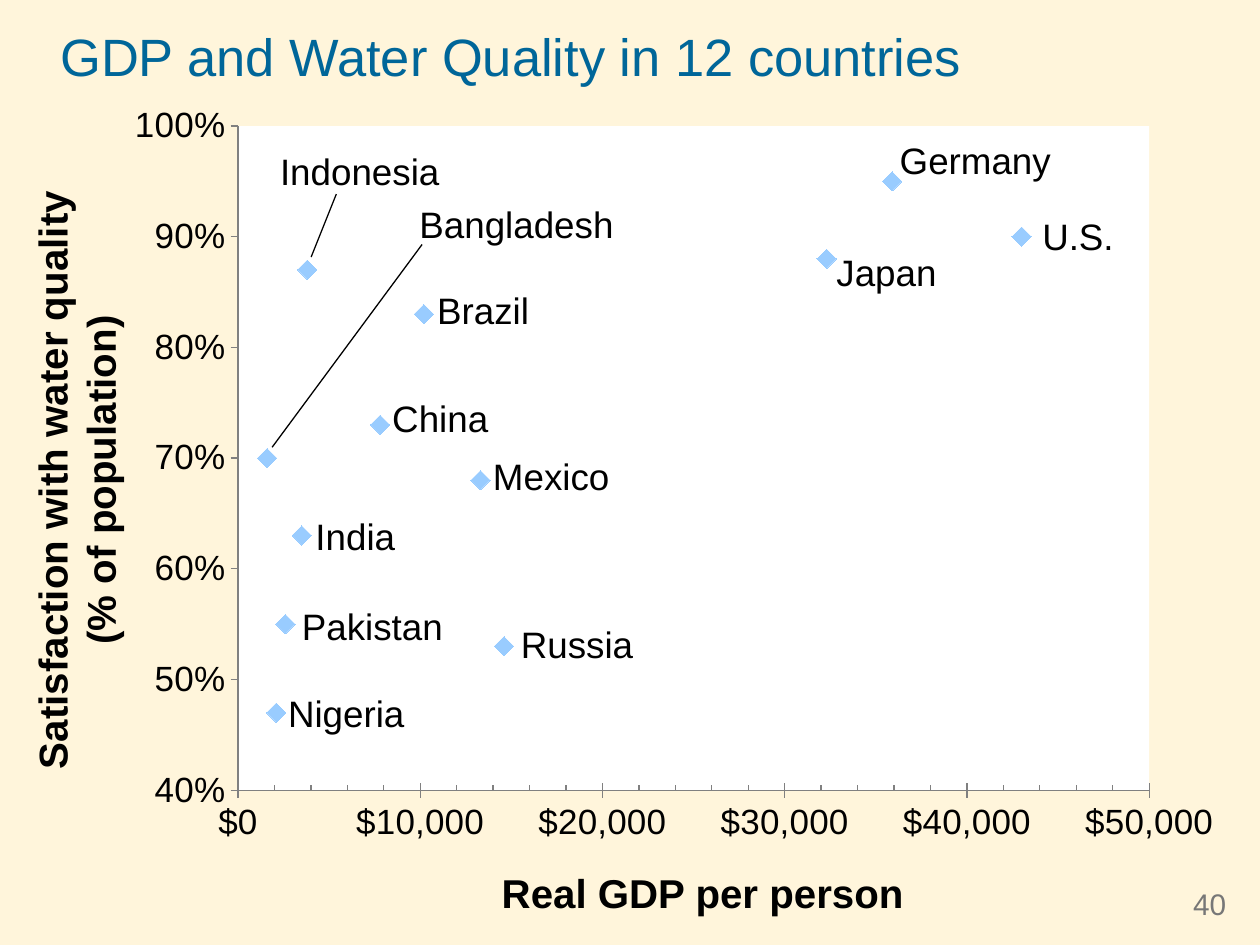
from lxml.etree import SubElement
from pptx import Presentation
from pptx.chart.data import XyChartData
from pptx.dml.color import RGBColor
from pptx.enum.chart import XL_AXIS_CROSSES, XL_CHART_TYPE, XL_MARKER_STYLE, XL_TICK_MARK
from pptx.enum.shapes import MSO_CONNECTOR
from pptx.enum.text import MSO_ANCHOR, PP_ALIGN
from pptx.oxml import parse_xml
from pptx.oxml.ns import nsdecls, qn
from pptx.util import Pt

COLORS = {"background": "FFF5DB", "title": "006699", "text": "000000", "number": "777777",
          "plot": "FFFFFF", "marker": "99CCFF", "axis": "808080"}
FONT = "Arial"

# Country, real GDP per person, satisfaction, label box (left, top, width)
COUNTRIES = [
    ("U.S.", 43000, 0.90, (589, 122.4, 54)),
    ("Germany", 35900, 0.95, (507.6, 78.5, 99.4)),
    ("Japan", 32300, 0.88, (470.2, 142.6, 72.7)),
    ("Russia", 14600, 0.53, (288.7, 355, 82)),
    ("Mexico", 13300, 0.68, (272.9, 259.2, 84.2)),
    ("Brazil", 10200, 0.83, (242.6, 164.2, 67)),
    ("China", 7800, 0.73, (219.6, 226, 64)),
    ("Indonesia", 3800, 0.87, (151.2, 85, 108.7)),
    ("India", 3500, 0.63, (173.5, 293.8, 59)),
    ("Pakistan", 2600, 0.55, (164.9, 344.9, 95.8)),
    ("Nigeria", 2100, 0.47, (163.4, 394.6, 69)),
    ("Bangladesh", 1600, 0.70, (235.4, 115.2, 119.5)),
]
LABEL_HEIGHT = 25.2
# Lines from a label to its point: x1, y1, x2, y2
LEADERS = [(241.2, 139.7, 155.5, 255.6), (177.8, 146.9, 192.2, 110.9)]

# Text, box (left, top, width, height), rotation, margins, paragraph and font formats
HEADINGS = [
    ("GDP and Water Quality in 12 countries", (27.4, 10, 662.4, 44), 0, "title",
     PP_ALIGN.LEFT, {"size": Pt(30)}),
    ("40", (653.8, 501.8, 54, 28.8), 0, "number", PP_ALIGN.RIGHT, {"size": Pt(17)}),
    ("Satisfaction with water quality\v(% of population)", (-149, 242.6, 384.5, 63.4), 270,
     "text", PP_ALIGN.CENTER, {"size": Pt(23), "bold": True}),
    ("Real GDP per person", (154.8, 492.5, 493.9, 34.6), 0, "text",
     PP_ALIGN.CENTER, {"size": Pt(23), "bold": True}),
]
CHART_BOX = (64.8, 59.8, 635.8, 434.9)
PLOT_LAYOUT = {"layoutTarget": "inner", "xMode": "edge", "yMode": "edge",
               "x": 0.112, "y": 0.028, "w": 0.819, "h": 0.873}
AXES = {
    "category_axis": {"minimum_scale": 0, "maximum_scale": 50000, "major_unit": 10000,
                      "minor_unit": 2000, "major_tick_mark": XL_TICK_MARK.CROSS,
                      "minor_tick_mark": XL_TICK_MARK.INSIDE},
    "value_axis": {"minimum_scale": 0.4, "maximum_scale": 1, "major_unit": 0.1,
                   "major_tick_mark": XL_TICK_MARK.OUTSIDE,
                   "minor_tick_mark": XL_TICK_MARK.NONE},
}
NUMBER_FORMATS = {"category_axis": '"$"#,##0', "value_axis": "0%"}


def color(name):
    return RGBColor.from_string(COLORS[name])


def set_all(target, values):
    for name, value in values.items():
        setattr(target, name, value)


def add_text(page, text, place, tone, align, font, rotation=0, margins=None):
    box = page.shapes.add_textbox(*map(Pt, place))
    box.rotation = rotation
    frame = box.text_frame
    set_all(frame, {"word_wrap": True, "vertical_anchor": MSO_ANCHOR.MIDDLE, **(margins or {})})
    frame.text = text
    para = frame.paragraphs[0]
    para.alignment = align
    for span in para.runs:
        set_all(span.font, {"name": FONT, **font})
        span.font.color.rgb = color(tone)


def add_scatter(page):
    data = XyChartData()
    points = data.add_series("Series 1")
    for _, income, satisfaction, _ in COUNTRIES:
        points.add_data_point(income, satisfaction)
    chart = page.shapes.add_chart(XL_CHART_TYPE.XY_SCATTER, *map(Pt, CHART_BOX), data).chart
    set_all(chart, {"has_legend": False, "has_title": False})
    set_all(chart.font, {"name": FONT, "size": Pt(20)})
    chart.font.color.rgb = color("text")

    # Axes
    for name, values in AXES.items():
        axis = getattr(chart, name)
        set_all(axis, {"has_major_gridlines": False, "has_title": False,
                       "crosses": XL_AXIS_CROSSES.MINIMUM, **values})
        set_all(axis.tick_labels, {"number_format": NUMBER_FORMATS[name],
                                   "number_format_is_linked": False})
        axis.format.line.color.rgb = color("axis")
        axis.format.line.width = Pt(0.75)

    # Markers
    plot = chart.plots[0]
    plot.vary_by_categories = False
    series = plot.series[0]
    series.format.line.fill.background()
    set_all(series.marker, {"style": XL_MARKER_STYLE.DIAMOND, "size": 11})
    series.marker.format.fill.solid()
    series.marker.format.fill.fore_color.rgb = color("marker")
    series.marker.format.line.fill.background()

    # Plot area position and fill
    area = chart.element.find(".//" + qn("c:plotArea"))
    for old in area.findall(qn("c:layout")):
        area.remove(old)
    layout = parse_xml(f"<c:layout {nsdecls('c')}><c:manualLayout/></c:layout>")
    for name, value in PLOT_LAYOUT.items():
        SubElement(layout[0], qn("c:" + name)).set("val", str(value))
    area.insert(0, layout)
    area.append(parse_xml(
        f"<c:spPr {nsdecls('c', 'a')}><a:solidFill><a:srgbClr val=\"{COLORS['plot']}\"/>"
        "</a:solidFill><a:ln><a:noFill/></a:ln></c:spPr>"))


def main():
    deck = Presentation()
    deck.slide_width, deck.slide_height = Pt(720), Pt(540)
    page = deck.slides.add_slide(deck.slide_layouts[6])
    page.background.fill.solid()
    page.background.fill.fore_color.rgb = color("background")

    add_scatter(page)

    # Title, page number and axis titles
    for text, place, rotation, tone, align, font in HEADINGS:
        add_text(page, text, place, tone, align, font, rotation)

    # Country labels
    no_margins = {f"margin_{side}": 0 for side in ("left", "top", "right", "bottom")}
    for country, _, _, place in COUNTRIES:
        add_text(page, country, (*place, LABEL_HEIGHT), "text", PP_ALIGN.CENTER,
                 {"size": Pt(21)}, margins=no_margins)

    # Leader lines
    for ends in LEADERS:
        leader = page.shapes.add_connector(MSO_CONNECTOR.STRAIGHT, *map(Pt, ends))
        leader.line.color.rgb = color("text")
        leader.line.width = Pt(0.75)
        SubElement(leader.element.spPr, qn("a:effectLst"))

    deck.save("out.pptx")


if __name__ == "__main__":
    main()
